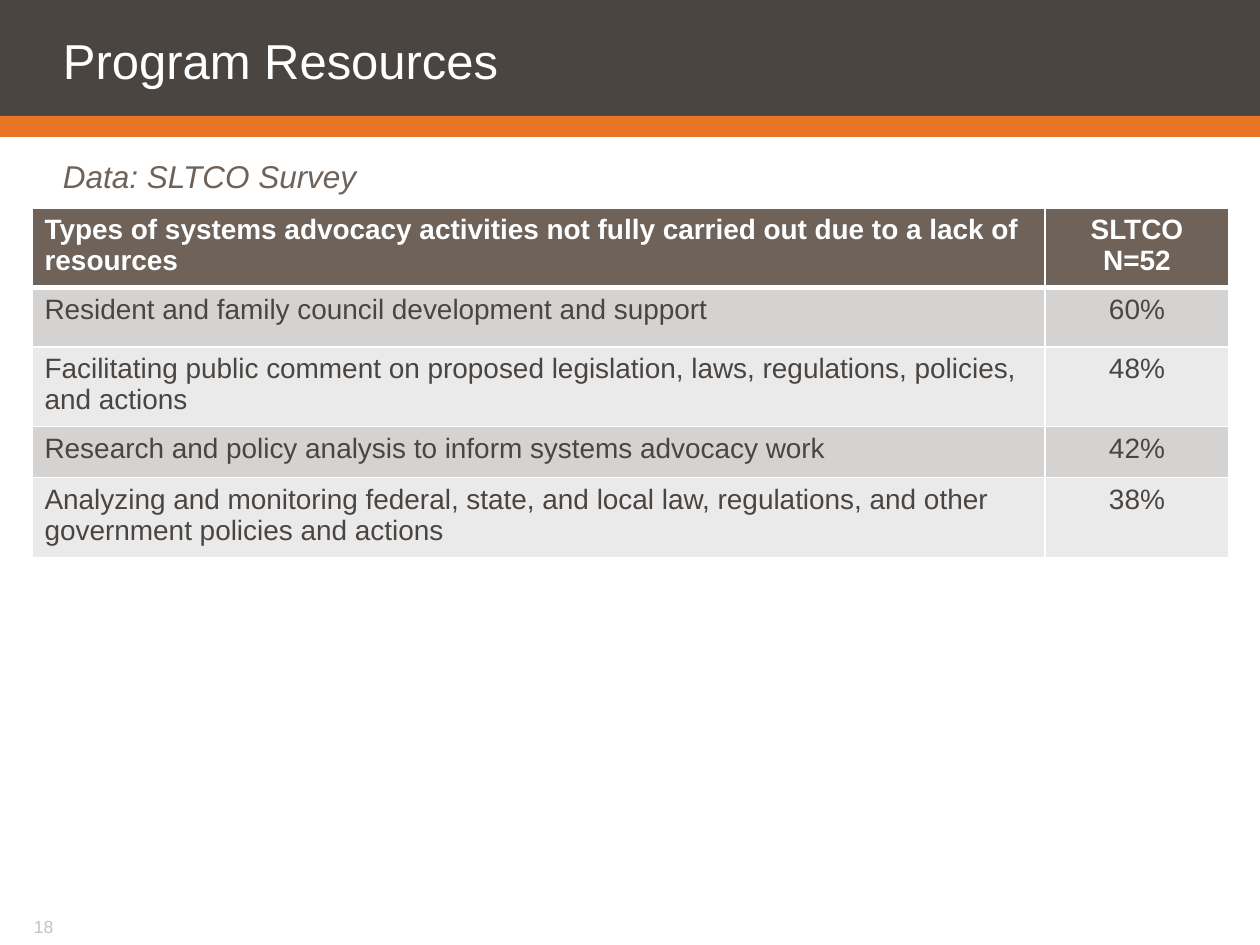
from lxml import etree
from pptx import Presentation
from pptx.dml.color import RGBColor
from pptx.enum.shapes import MSO_SHAPE
from pptx.enum.text import MSO_ANCHOR, PP_ALIGN
from pptx.oxml.ns import qn
from pptx.util import Pt

RECT = MSO_SHAPE.RECTANGLE
TOP, MIDDLE = MSO_ANCHOR.TOP, MSO_ANCHOR.MIDDLE
LEFT, CENTER = PP_ALIGN.LEFT, PP_ALIGN.CENTER
PX = 914400 / 126
COLORS = {
    "dark": "4A4541", "orange": "E87424", "brown": "6E6259", "white": "FFFFFF",
    "gray": "C8C2BF", "band": "D5D3D1", "pale": "EBEAEA",
}


def emu(*sizes):
    return [round(size * PX) for size in sizes]


def write(para, text, size, color, bold=False, italic=False):
    run = para.add_run()
    run.text = text
    font = run.font
    font.name, font.size = "Arial", Pt(size)
    font.bold, font.italic = bold, italic
    font.color.rgb = RGBColor.from_string(COLORS[color])


deck = Presentation()
deck.slide_width, deck.slide_height = emu(1260, 945)
slide = deck.slides.add_slide(deck.slide_layouts[6])
shapes = slide.shapes

# Header bands
for top, height, color in [(0, 116, "dark"), (116, 21, "orange")]:
    band = shapes.add_shape(RECT, *emu(0, top, 1260, height))
    band.shadow.inherit = False
    band.fill.solid()
    band.fill.fore_color.rgb = RGBColor.from_string(COLORS[color])
    band.line.fill.background()

# Title, data source and page number: box, insets, anchor, wrap, text style
labels = [
    ((0, 0, 1260, 116), (63, 13, 13, 0), MIDDLE, True,
     ("Program Resources", 28, "white")),
    ((0, 151, 1260, 44), (63, 6, 0, 6), TOP, True,
     ("Data: SLTCO Survey", 18, "brown", False, True)),
    ((21, 916, 242, 23), (13, 0, 13, 6), TOP, False,
     ("18", 10, "gray")),
]
for box, insets, anchor, wrap, style in labels:
    frame = shapes.add_textbox(*emu(*box)).text_frame
    frame.word_wrap = wrap
    frame.vertical_anchor = anchor
    (frame.margin_left, frame.margin_top,
     frame.margin_right, frame.margin_bottom) = emu(*insets)
    para = frame.paragraphs[0]
    if anchor == MIDDLE:
        para.line_spacing = Pt(28)
    write(para, *style)

# Table of advocacy activities
rows = [
    (75, "Types of systems advocacy activities not fully carried out due to "
         "a lack of resources", "SLTCO\nN=52"),
    (59, "Resident and family council development and support", "60%"),
    (75, "Facilitating public comment on proposed legislation, laws, "
         "regulations, policies, and actions", "48%"),
    (51, "Research and policy analysis to inform systems advocacy work", "42%"),
    (75, "Analyzing and monitoring federal, state, and local law, regulations, "
         "and other government policies and actions", "38%"),
]
total = sum(row[0] for row in rows)
table = shapes.add_table(len(rows), 2, *emu(32, 208, 1197, total)).table
for col, width in zip(table.columns, emu(1013, 184)):
    col.width = width

for i, (height, *texts) in enumerate(rows):
    table.rows[i].height = emu(height)[0]
    head = i == 0
    fill = "brown" if head else ("pale", "band")[i % 2]
    for j, text in enumerate(texts):
        cell = table.cell(i, j)
        frame = cell.text_frame
        for n, line in enumerate(text.split("\n")):
            para = frame.add_paragraph() if n else frame.paragraphs[0]
            para.alignment = CENTER if j else LEFT
            write(para, line, 16, "white" if head else "dark", bold=head)

        # White borders, thicker between the header and the body
        props = cell._tc.get_or_add_tcPr()
        for side in "LRTB":
            thick = (i, side) in [(0, "B"), (1, "T")]
            line = etree.SubElement(props, qn(f"a:ln{side}"),
                                    w=str(Pt(3 if thick else 1)))
            solid = etree.SubElement(line, qn("a:solidFill"))
            etree.SubElement(solid, qn("a:srgbClr"), val=COLORS["white"])
        cell.fill.solid()
        cell.fill.fore_color.rgb = RGBColor.from_string(COLORS[fill])

deck.save("out.pptx")
